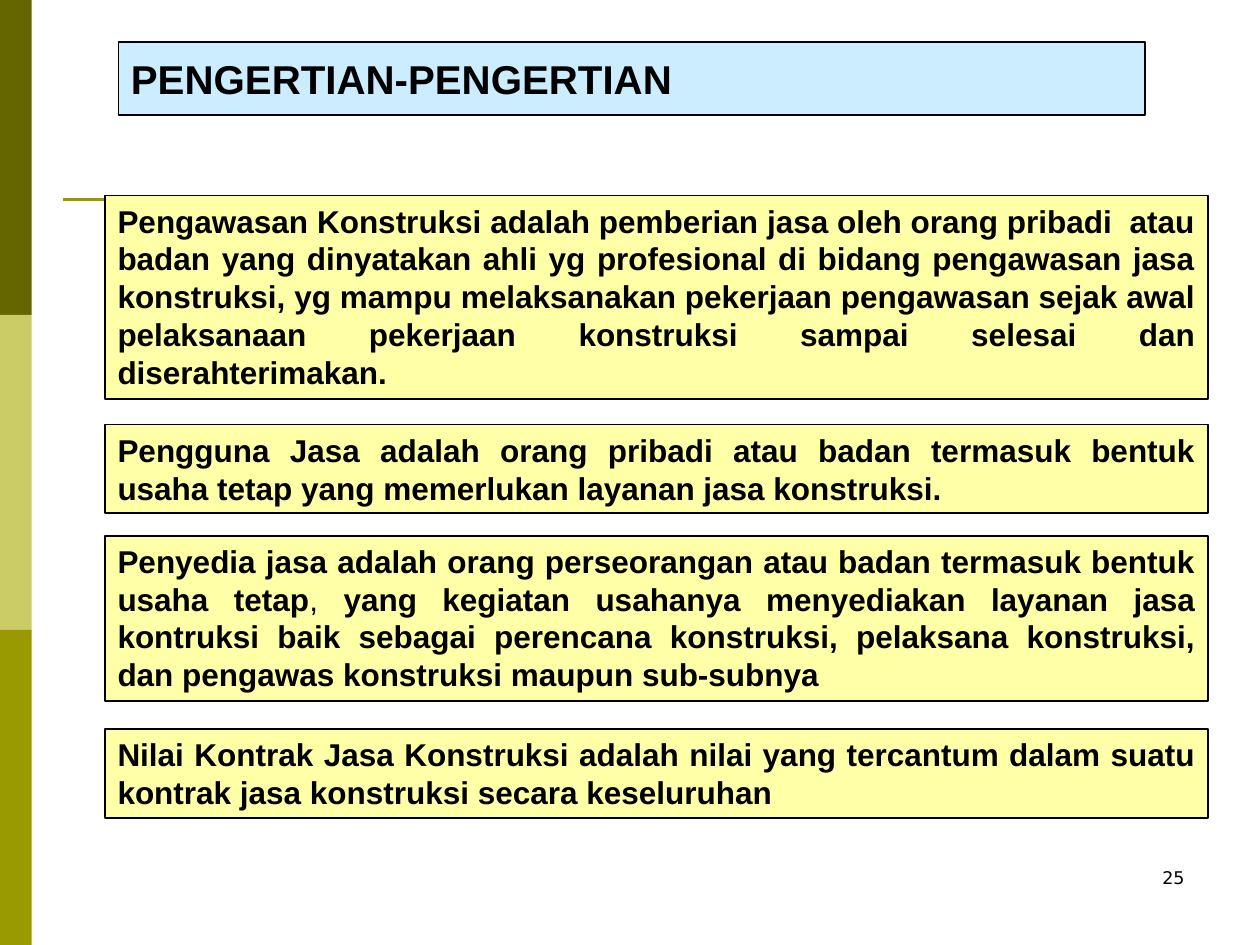
from lxml.etree import SubElement
from pptx import Presentation
from pptx.dml.color import RGBColor
from pptx.enum.shapes import MSO_CONNECTOR, MSO_SHAPE
from pptx.enum.text import MSO_ANCHOR, PP_ALIGN
from pptx.oxml.ns import qn
from pptx.util import Cm, Pt

COLORS = {
    "dark olive": "666600",
    "light olive": "CCCC66",
    "olive": "999900",
    "title": "CCECFF",
    "definition": "FFFFA8",
    "ink": "000000",
}

# Top and height in cm, then the text as (wording, bold) runs
DEFINITIONS = [
    (3.94, 4.1, [("Pengawasan Konstruksi adalah pemberian jasa oleh orang pribadi  atau "
                  "badan yang dinyatakan ahli yg profesional di bidang pengawasan jasa "
                  "konstruksi, yg mampu melaksanakan pekerjaan pengawasan sejak awal "
                  "pelaksanaan pekerjaan konstruksi sampai selesai dan "
                  "diserahterimakan.", True)]),
    (8.56, 1.79, [("Pengguna Jasa adalah orang pribadi atau badan termasuk bentuk "
                   "usaha tetap yang memerlukan layanan jasa konstruksi.", True)]),
    (10.8, 3.33, [("Penyedia jasa adalah orang perseorangan atau badan termasuk bentuk "
                   "usaha tetap", True),
                  (", ", False),
                  ("yang kegiatan usahanya menyediakan layanan jasa kontruksi baik "
                   "sebagai perencana konstruksi, pelaksana konstruksi, dan pengawas "
                   "konstruksi maupun sub-subnya", True)]),
    (14.7, 1.79, [("Nilai Kontrak Jasa Konstruksi adalah nilai yang tercantum dalam suatu "
                   "kontrak jasa konstruksi secara keseluruhan", True)]),
]


def rgb(name):
    return RGBColor.from_string(COLORS[name])


def add_panel(slide, left, top, width, height, fill, outlined=False):
    panel = slide.shapes.add_shape(MSO_SHAPE.RECTANGLE, Cm(left), Cm(top), Cm(width), Cm(height))
    panel.shadow.inherit = False
    panel.fill.solid()
    panel.fill.fore_color.rgb = rgb(fill)
    if outlined:
        panel.line.color.rgb = rgb("ink")
        panel.line.width = Pt(1)
    else:
        panel.line.fill.background()
    return panel


def write(shape, runs, size, align, anchor=MSO_ANCHOR.TOP, font="Arial"):
    frame = shape.text_frame
    frame.word_wrap = True
    frame.vertical_anchor = anchor
    paragraph = frame.paragraphs[0]
    paragraph.alignment = align
    paragraph.font.name = font
    paragraph.font.size = Pt(size)
    paragraph.font.color.rgb = rgb("ink")
    for wording, bold in runs:
        run = paragraph.add_run()
        run.text = wording
        if len(runs) > 1:
            run.font.bold = bold
        else:
            paragraph.font.bold = bold


def add_side_bar(slide, left, top, width, height):
    bands = ["dark olive", "light olive", "olive"]
    band_height = height / len(bands)
    for i, band in enumerate(bands):
        add_panel(slide, left, top + i * band_height, width, band_height, band)


def add_rule(slide, left, top, width):
    rule = slide.shapes.add_connector(
        MSO_CONNECTOR.STRAIGHT, Cm(left), Cm(top), Cm(left + width), Cm(top))
    rule.line.color.rgb = rgb("olive")
    rule.line.width = Pt(1.5)
    SubElement(rule._element.spPr, qn("a:effectLst"))


def add_title(slide, left, top, width, height):
    title = add_panel(slide, left, top, width, height, "title", outlined=True)
    write(title, [("PENGERTIAN-PENGERTIAN", True)], 23, PP_ALIGN.LEFT, MSO_ANCHOR.MIDDLE)


def add_definitions(slide, left, width):
    for top, height, runs in DEFINITIONS:
        definition = add_panel(slide, left, top, width, height, "definition", outlined=True)
        write(definition, runs, 18, PP_ALIGN.JUSTIFY)


def add_page_number(slide, left, top, width, height):
    number = slide.shapes.add_textbox(Cm(left), Cm(top), Cm(width), Cm(height))
    write(number, [("25", False)], 10, PP_ALIGN.RIGHT, font="DejaVu Sans")


def main():
    deck = Presentation()
    deck.slide_width, deck.slide_height = Cm(25.4), Cm(19.05)
    slide = deck.slides.add_slide(deck.slide_layouts[6])

    # Template decoration
    add_side_bar(slide, 0, 0, 0.64, 19.05)
    add_rule(slide, 1.27, 4.02, 22.43)

    # Content
    add_page_number(slide, 18.2, 17.35, 5.93, 1.27)
    add_title(slide, 2.39, 0.85, 20.7, 1.47)
    add_definitions(slide, 2.12, 22.23)

    deck.save("out.pptx")


if __name__ == "__main__":
    main()
